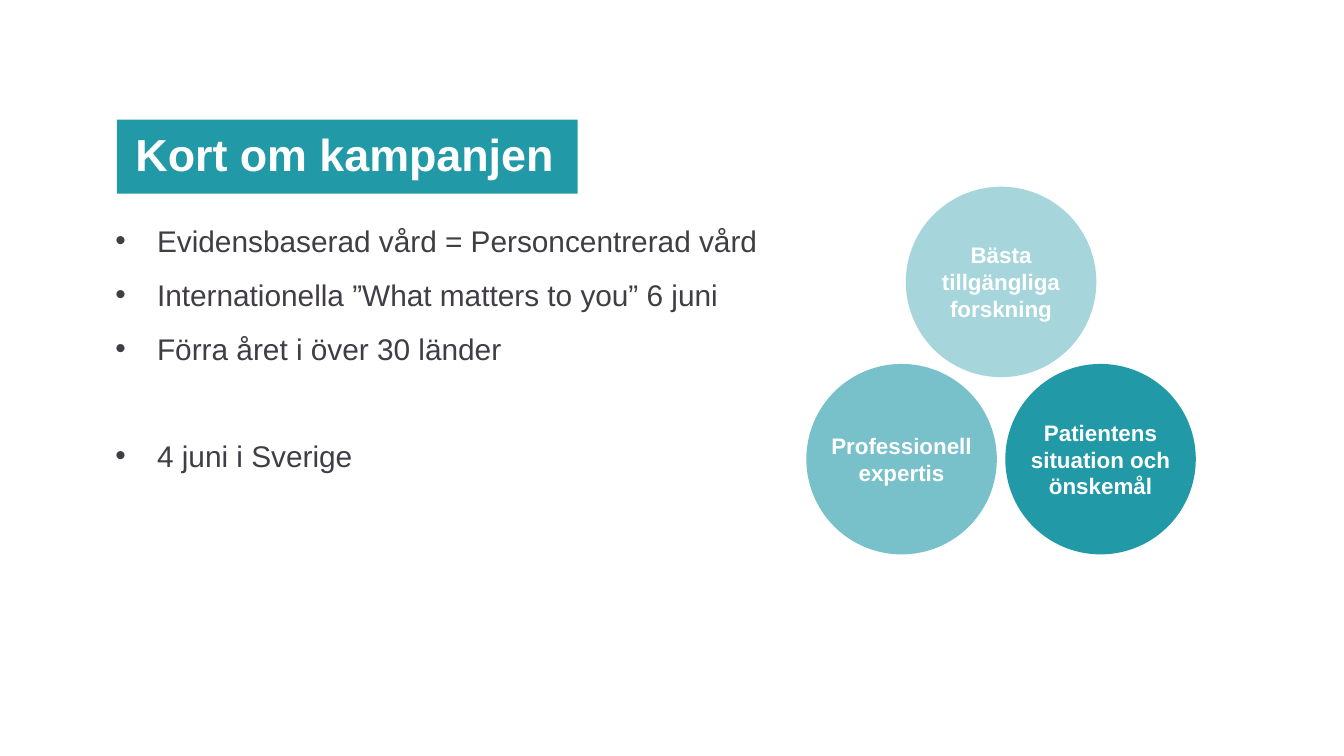
import dataclasses

import lxml.etree
import pptx
import pptx.dml.color
import pptx.enum.shapes
import pptx.enum.text
import pptx.oxml.ns
import pptx.util

Cm = pptx.util.Cm
Pt = pptx.util.Pt
RGB = pptx.dml.color.RGBColor
Shape = pptx.enum.shapes.MSO_SHAPE
Align = pptx.enum.text.PP_ALIGN
Anchor = pptx.enum.text.MSO_ANCHOR
qn = pptx.oxml.ns.qn


@dataclasses.dataclass(frozen=True)
class Theme:
    font: str = "Arial"
    teal: RGB = RGB(0x21, 0x99, 0xA7)
    white: RGB = RGB(0xFF, 0xFF, 0xFF)
    ink: RGB = RGB(0x40, 0x3D, 0x45)
    title: int = 24
    body: int = 16
    label: int = 12


THEME = Theme()


def add_form(slide, kind, left, top, width, height, alpha=100):
    """Add a teal shape; alpha is its opacity in percent."""
    form = slide.shapes.add_shape(kind, Cm(left), Cm(top), Cm(width), Cm(height))
    form.shadow.inherit = False
    form.fill.solid()
    form.fill.fore_color.rgb = THEME.teal
    form.line.fill.background()
    if alpha < 100:
        color = form._element.spPr.find(qn("a:solidFill")).find(qn("a:srgbClr"))
        lxml.etree.SubElement(color, qn("a:alpha"), val=str(alpha * 1000))


def add_frame(slide, left, top, width, height, anchor):
    box = slide.shapes.add_textbox(Cm(left), Cm(top), Cm(width), Cm(height))
    frame = box.text_frame
    frame.word_wrap = True
    frame.vertical_anchor = anchor
    return frame


def set_font(para, size, color, bold=False):
    font = para.font
    font.name = THEME.font
    font.size = Pt(size)
    font.bold = bold
    font.color.rgb = color
    for run in para.runs:
        run.font.name = THEME.font
        run.font.size = Pt(size)
        run.font.bold = bold
        run.font.color.rgb = color


def add_dot(para):
    """Give the paragraph a hanging bullet."""
    props = para._p.get_or_add_pPr()
    indent = Cm(0.79)
    props.set("marL", str(indent))
    props.set("indent", str(-indent))
    color = lxml.etree.SubElement(props, qn("a:buClr"))
    lxml.etree.SubElement(color, qn("a:srgbClr"), val=str(THEME.ink))
    lxml.etree.SubElement(props, qn("a:buFont"), typeface=THEME.font)
    lxml.etree.SubElement(props, qn("a:buChar"), char="•")


def add_title(slide, text):
    add_form(slide, Shape.RECTANGLE, 2.21, 2.26, 8.71, 1.4)
    frame = add_frame(slide, 2.31, 1.22, 16.61, 2.31, Anchor.BOTTOM)
    frame.text = text
    set_font(frame.paragraphs[0], THEME.title, THEME.white, True)


def add_list(slide, items):
    """Add bullets from pairs of text and space before in points."""
    frame = add_frame(slide, 1.93, 4.01, 16.61, 8.46, Anchor.TOP)
    frame.text = "\n".join(text for text, gap in items)
    for para, (text, gap) in zip(frame.paragraphs, items):
        add_dot(para)
        para.line_spacing = 1.1
        para.space_before = Pt(gap)
        set_font(para, THEME.body, THEME.ink)


def add_disc(slide, left, top, alpha, text, lines):
    """Add a circle with a label box centred on it."""
    size = 3.6
    add_form(slide, Shape.OVAL, left, top, size, size, alpha)
    high = 0.25 + 0.5 * lines
    frame = add_frame(slide, left, top + (size - high) / 2, size, high,
                      Anchor.MIDDLE)
    frame.text = text
    para = frame.paragraphs[0]
    para.alignment = Align.CENTER
    set_font(para, THEME.label, THEME.white, True)


def main():
    deck = pptx.Presentation()
    deck.slide_width = Cm(25.4)
    deck.slide_height = Cm(14.29)
    slide = deck.slides.add_slide(deck.slide_layouts[6])

    add_title(slide, "Kort om kampanjen")
    add_list(slide, [
        ("Evidensbaserad vård = Personcentrerad vård", 0),
        ("Internationella ”What matters to you” 6 juni", 8),
        ("Förra året i över 30 länder", 8),
        ("4 juni i Sverige", 36),
    ])

    left, top, step, rise = 15.24, 6.88, 3.76, 3.35
    add_disc(slide, left + step / 2, top - rise, 40,
             "Bästa tillgängliga forskning", 3)
    add_disc(slide, left, top, 60, "Professionell expertis", 2)
    add_disc(slide, left + step, top, 100,
             "Patientens situation och önskemål", 3)

    deck.save("out.pptx")


if __name__ == "__main__":
    main()
